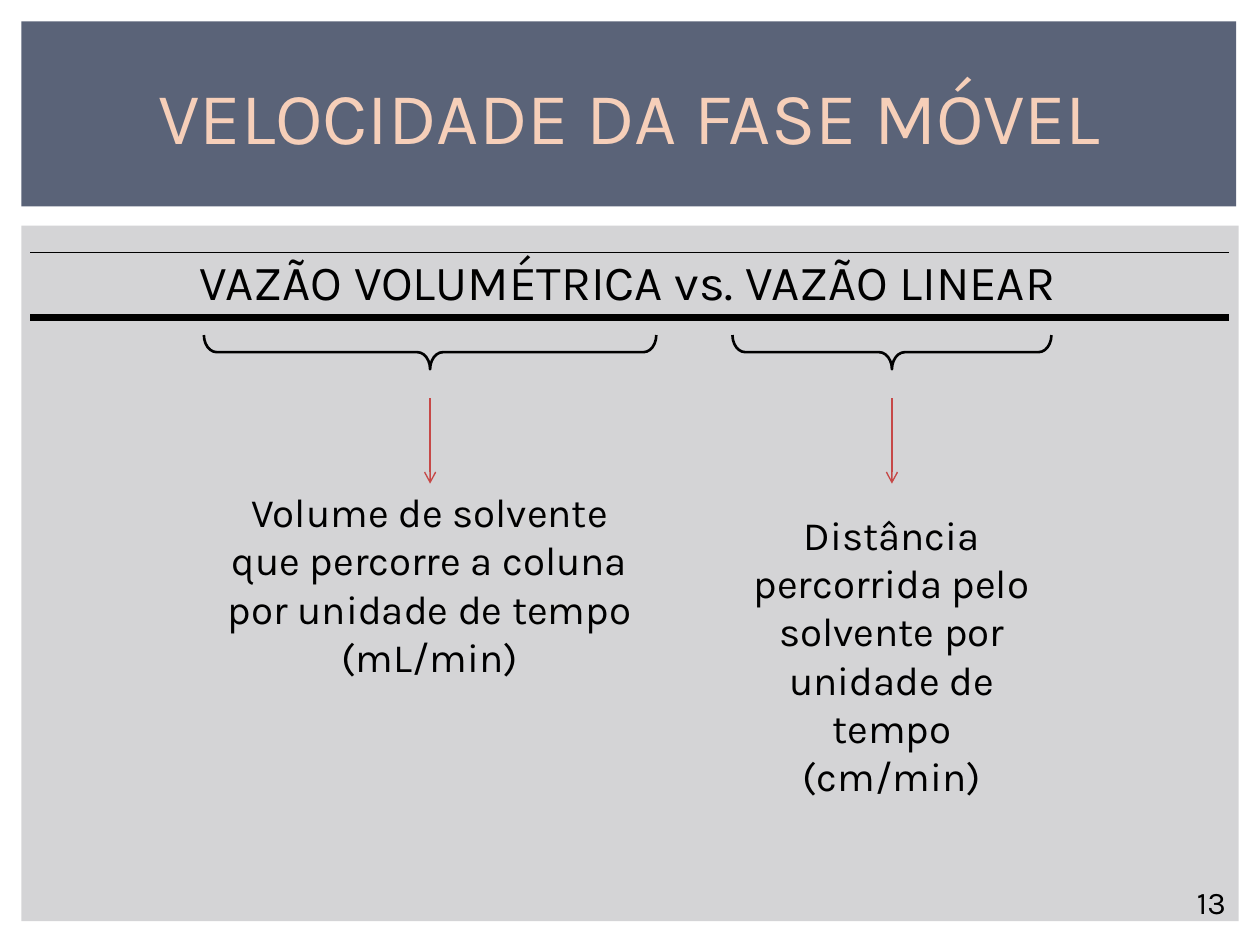
from lxml.etree import SubElement
from pptx import Presentation
from pptx.dml.color import RGBColor
from pptx.enum.shapes import MSO_CONNECTOR, MSO_SHAPE
from pptx.enum.text import MSO_ANCHOR, PP_ALIGN
from pptx.oxml.ns import qn
from pptx.util import Cm, Pt

FONT = "Karla"
BLACK, PANEL, BANNER = "000000", "D4D4D6", "5A6378"
TITLE_COLOR, ARROW_COLOR = "F6CFB9", "C64847"


def color(value):
    return RGBColor.from_string(value)


def format_text(shape, size, text_color=BLACK, align=PP_ALIGN.LEFT):
    for paragraph in shape.text_frame.paragraphs:
        paragraph.alignment = align
        for run in paragraph.runs:
            run.font.name = FONT
            run.font.size = Pt(size)
            run.font.color.rgb = color(text_color)


def add_panel(slide, left, top, width, height, fill):
    panel = slide.shapes.add_shape(
        MSO_SHAPE.RECTANGLE, Cm(left), Cm(top), Cm(width), Cm(height))
    panel.shadow.inherit = False
    panel.fill.solid()
    panel.fill.fore_color.rgb = color(fill)
    panel.line.fill.background()


def add_text(slide, text, left, top, width, height, size,
             align=PP_ALIGN.LEFT, wrap=False):
    box = slide.shapes.add_textbox(Cm(left), Cm(top), Cm(width), Cm(height))
    box.text_frame.word_wrap = wrap
    box.text_frame.text = text
    format_text(box, size, align=align)


def add_line(slide, x1, y1, x2, y2, width, line_color=BLACK, arrow=False):
    line = slide.shapes.add_connector(
        MSO_CONNECTOR.STRAIGHT, Cm(x1), Cm(y1), Cm(x2), Cm(y2))
    line.line.width = Pt(width)
    line.line.color.rgb = color(line_color)
    if arrow:
        SubElement(line.line._get_or_add_ln(), qn("a:tailEnd"), type="arrow")
    SubElement(line._element.spPr, qn("a:effectLst"))


def add_brace(slide, center_x, center_y, span, depth=0.69):
    # The brace is drawn upright, then turned to point downwards
    brace = slide.shapes.add_shape(
        MSO_SHAPE.RIGHT_BRACE, Cm(center_x - depth / 2),
        Cm(center_y - span / 2), Cm(depth), Cm(span))
    brace.rotation = 90
    brace.adjustments[0] = 0.375
    brace.adjustments[1] = 0.5
    brace.shadow.inherit = False
    brace.fill.background()
    brace.line.color.rgb = color(BLACK)
    brace.line.width = Pt(1.5)


def add_definition(slide, text, center_x, span, top, width, height):
    """Brace under a term, arrow, and the explanation below."""
    add_brace(slide, center_x, 7.1, span)
    add_line(slide, center_x, 8.03, center_x, 9.75, 0.79, ARROW_COLOR, arrow=True)
    add_text(slide, text, center_x - width / 2, top, width, height, 23,
             PP_ALIGN.CENTER, wrap=True)


def set_title(slide, text):
    title = slide.shapes.title
    title.left, title.top = Cm(0.61), Cm(1.3)
    title.width, title.height = Cm(24.16), Cm(2.06)
    title.text_frame.text = text
    title.text_frame.vertical_anchor = MSO_ANCHOR.MIDDLE
    format_text(title, 42, TITLE_COLOR, PP_ALIGN.CENTER)
    # Bring the title in front of the banner
    slide.shapes._spTree.append(title._element)


def main():
    presentation = Presentation()
    presentation.slide_width, presentation.slide_height = Cm(25.4), Cm(19.05)
    slide = presentation.slides.add_slide(presentation.slide_layouts[5])

    # Background panels and title
    add_panel(slide, 0.43, 4.55, 24.54, 14.02, PANEL)
    add_panel(slide, 0.43, 0.43, 24.49, 3.73, BANNER)
    set_title(slide, "VELOCIDADE DA FASE MÓVEL")

    # Heading between two rules
    add_text(slide, "VAZÃO VOLUMÉTRICA vs. VAZÃO LINEAR",
             3.78, 4.95, 17.78, 1.45, 28)
    for y, width in ((5.08, 0.25), (6.4, 4.5)):
        add_line(slide, 0.61, y, 24.77, y, width)

    # The two kinds of flow
    add_definition(
        slide, "Volume de solvente que percorre a coluna por unidade de tempo\n"
        "(mL/min)", 8.67, 9.12, 9.7, 9.12, 4.19)
    add_definition(
        slide, "Distância percorrida pelo solvente por unidade de tempo\n"
        "(cm/min)", 17.98, 6.43, 10.16, 6.45, 6.15)

    # Slide number
    add_text(slide, "13", 23.88, 17.68, 1.27, 1.02, 18)

    presentation.save("out.pptx")


if __name__ == "__main__":
    main()
